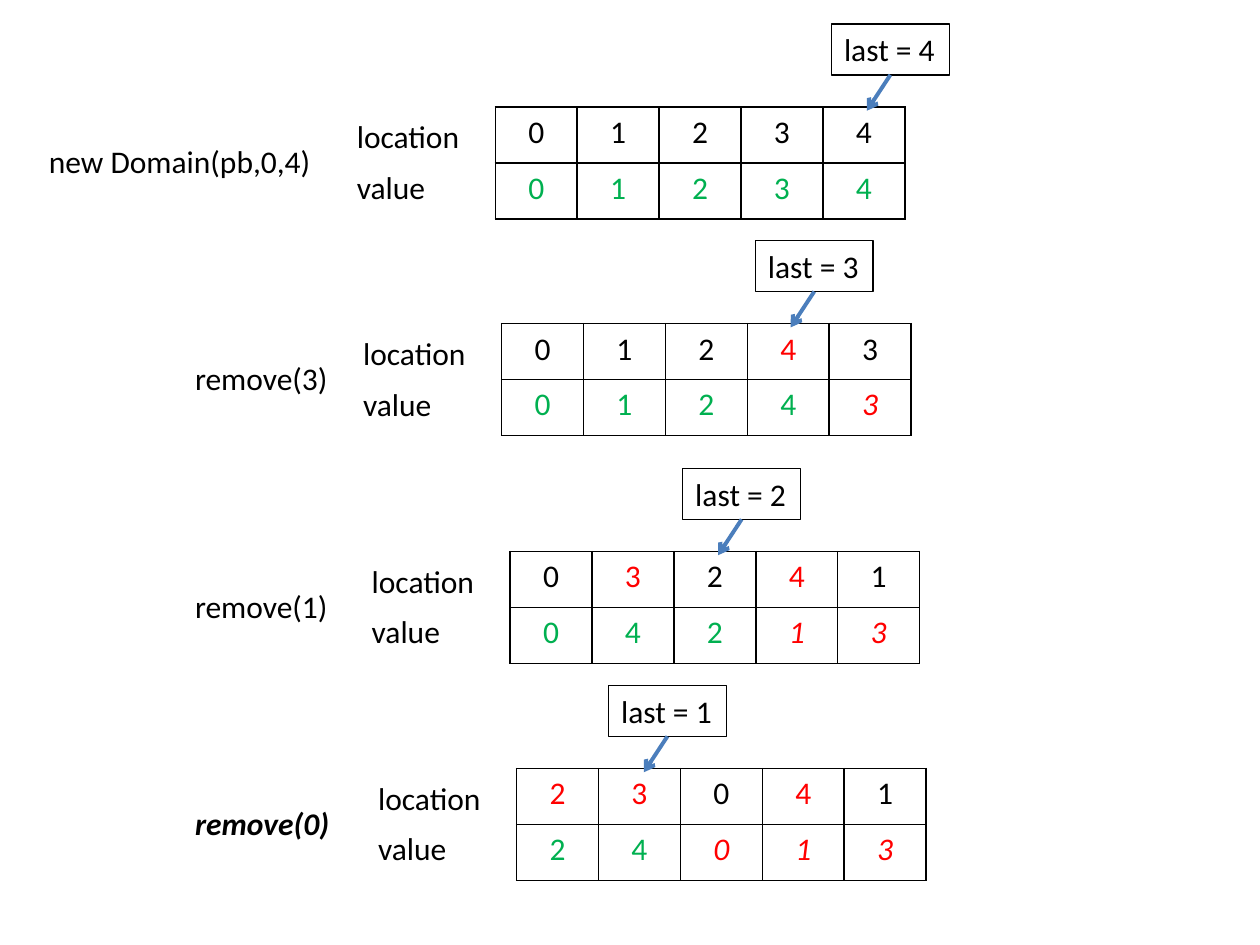
from lxml import etree
from pptx import Presentation
from pptx.dml.color import RGBColor
from pptx.enum.shapes import MSO_CONNECTOR, MSO_SHAPE
from pptx.enum.text import MSO_ANCHOR, MSO_AUTO_SIZE, PP_ALIGN
from pptx.oxml.ns import qn
from pptx.util import Pt

STRAIGHT = MSO_CONNECTOR.STRAIGHT
RECTANGLE = MSO_SHAPE.RECTANGLE
TOP = MSO_ANCHOR.TOP
FIT_SHAPE = MSO_AUTO_SIZE.SHAPE_TO_FIT_TEXT
LEFT, CENTER = PP_ALIGN.LEFT, PP_ALIGN.CENTER
BOTTOM_SITE = 2

COLORS = {"text": "000000", "kept": "00B050", "removed": "FF0000", "arrow": "4B7EBC"}
FONT = {"name": "Calibri", "size": Pt(18), "bold": False, "italic": False}
COLUMN_WIDTH, ROW_HEIGHT, LABEL_HEIGHT = 46.8, 32, 29.1

# operation, its left and width, table left and top, "last" box left, last, values
STATES = [
    ("new Domain(pb,0,4)", 20.9, 165.6, 283, 61.2, 475.2, 4, [0, 1, 2, 3, 4]),
    ("remove(3)", 104.4, 91.4, 286.6, 185, 431.7, 3, [0, 1, 2, 4, 3]),
    ("remove(1)", 104.4, 91.4, 291.5, 315.2, 390.2, 2, [0, 4, 2, 1, 3]),
    ("remove(0)", 104.4, 92.2, 295.2, 439.2, 347.8, 1, [2, 4, 0, 1, 3]),
]


def color(key):
    return RGBColor.from_string(COLORS[key])


def write(text_frame, text, color_key="text", alignment=LEFT, **changes):
    paragraph = text_frame.paragraphs[0]
    paragraph.alignment = alignment
    run = paragraph.add_run()
    run.text = text
    for name, value in {**FONT, **changes}.items():
        setattr(run.font, name, value)
    run.font.color.rgb = color(color_key)


def fit_text(text_frame):
    for name, value in {"word_wrap": False, "auto_size": FIT_SHAPE,
                        "vertical_anchor": TOP}.items():
        setattr(text_frame, name, value)


def add_label(slide, text, left, top, width, **changes):
    label = slide.shapes.add_textbox(Pt(left), Pt(top), Pt(width), Pt(LABEL_HEIGHT))
    fit_text(label.text_frame)
    write(label.text_frame, text, **changes)


def add_last_box(slide, last, left, top):
    box = slide.shapes.add_shape(RECTANGLE, Pt(left), Pt(top), Pt(67.2), Pt(LABEL_HEIGHT))
    box.shadow.inherit = False
    box.fill.background()
    box.line.color.rgb = color("text")
    box.line.width = Pt(0.75)
    fit_text(box.text_frame)
    write(box.text_frame, f"last = {last}")
    return box


def add_arrow(slide, box):
    """Point from the bottom of the box down to the last kept column."""
    start_x, start_y = box.left + box.width // 2, box.top + box.height
    arrow = slide.shapes.add_connector(
        STRAIGHT, start_x, start_y, start_x - Pt(13.5), start_y + Pt(20.5))
    arrow.begin_connect(box, BOTTOM_SITE)
    arrow.line.color.rgb = color("arrow")
    arrow.line.width = Pt(2.25)
    properties = arrow.element.spPr
    etree.SubElement(properties.find(qn("a:ln")), qn("a:tailEnd"), type="arrow")
    etree.SubElement(properties, qn("a:effectLst"))


def add_borders(cell):
    properties = cell._tc.get_or_add_tcPr()
    for side in ("lnL", "lnR", "lnT", "lnB"):
        line = etree.SubElement(properties, qn(f"a:{side}"), w=str(Pt(1)))
        fill = etree.SubElement(line, qn("a:solidFill"))
        etree.SubElement(fill, qn("a:srgbClr"), val=COLORS["text"])


def add_domain_table(slide, values, last, left, top):
    """Show where each value is stored, above the values; red is beyond last."""
    count = len(values)
    table = slide.shapes.add_table(
        2, count, Pt(left), Pt(top), Pt(COLUMN_WIDTH * count), Pt(ROW_HEIGHT * 2)).table
    table.first_row = table.horz_banding = False
    for row in table.rows:
        row.height = Pt(ROW_HEIGHT)
    for column, value in enumerate(values):
        table.columns[column].width = Pt(COLUMN_WIDTH)
        location = values.index(column)
        removed = column > last
        contents = [
            (location, "removed" if location > last else "text", False),
            (value, "removed" if removed else "kept", removed),
        ]
        for row, (number, color_key, italic) in enumerate(contents):
            cell = table.cell(row, column)
            add_borders(cell)
            cell.fill.background()
            write(cell.text_frame, str(number), color_key, CENTER, italic=italic)


def main():
    presentation = Presentation()
    presentation.slide_width, presentation.slide_height = Pt(720), Pt(540)
    slide = presentation.slides.add_slide(presentation.slide_layouts[6])
    for state in STATES:
        operation, operation_left, width, left, top, box_left, last, values = state
        final = state is STATES[-1]
        add_domain_table(slide, values, last, left, top)
        add_label(slide, "location", left - 86.2, top + 2.2, 73.4)
        add_label(slide, "value", left - 86.2, top + 31.2, 54)
        box = add_last_box(slide, last, box_left, top - 47.5)
        add_arrow(slide, box)
        add_label(slide, operation, operation_left, top + 16.6, width,
                  bold=final, italic=final)
    presentation.save("out.pptx")


if __name__ == "__main__":
    main()
